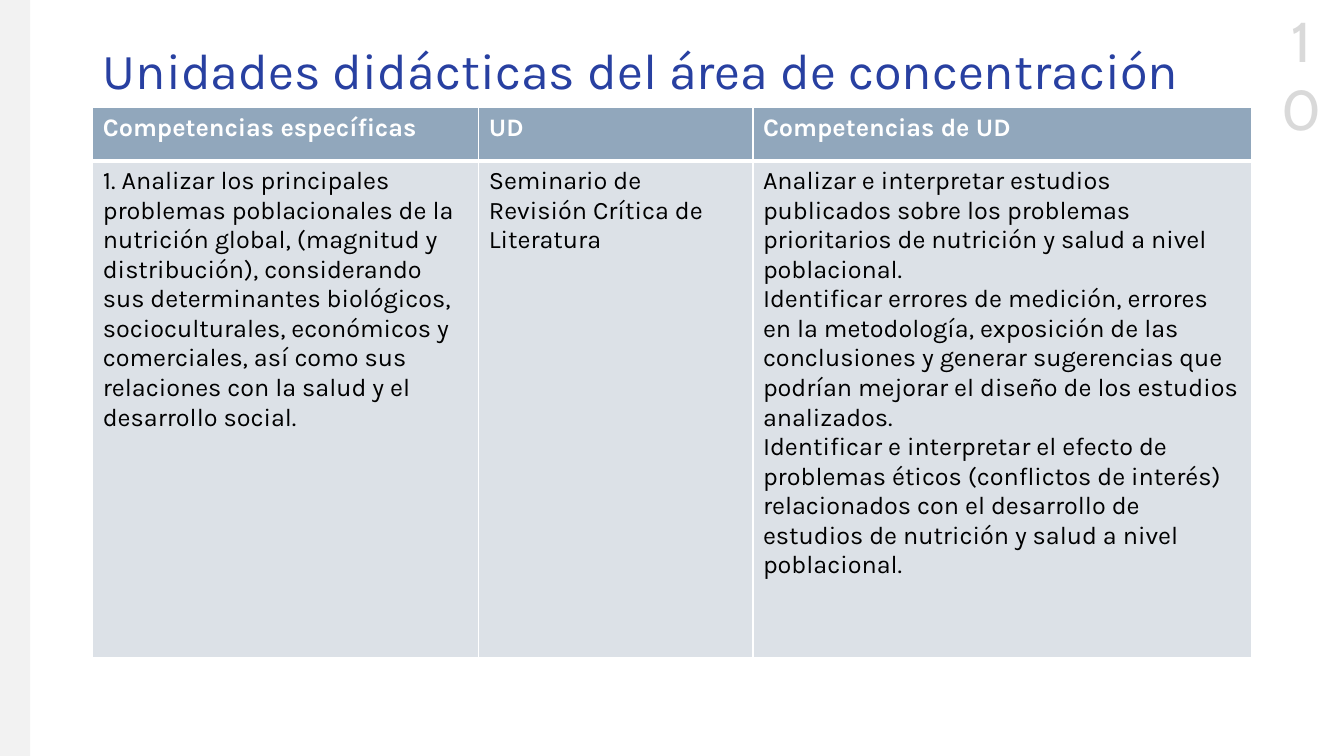
"""Build the slide on the teaching units of the concentration area."""
import dataclasses
import typing

import pptx
import pptx.dml.color
import pptx.enum.shapes
import pptx.enum.text
import pptx.oxml.ns
import pptx.oxml.xmlchemy
import pptx.presentation
import pptx.slide
import pptx.table
import pptx.text.text
import pptx.util
from lxml import etree

Pt = pptx.util.Pt
RGBColor = pptx.dml.color.RGBColor

WHITE = RGBColor(0xFF, 0xFF, 0xFF)
BLACK = RGBColor(0x00, 0x00, 0x00)
BLUE = RGBColor(0x28, 0x40, 0xA1)
BAND_GREY = RGBColor(0xF2, 0xF2, 0xF2)
NUMBER_GREY = RGBColor(0xD9, 0xD9, 0xD9)
HEADER_FILL = RGBColor(0x91, 0xA7, 0xBC)
BODY_FILL = RGBColor(0xDC, 0xE1, 0xE7)

LEFT = 66.24
WIDTH = 828


@dataclasses.dataclass(frozen=True)
class Column:
    width: float
    heading: str
    body: str


@dataclasses.dataclass(frozen=True)
class RowStyle:
    height: float
    fill: RGBColor
    color: RGBColor
    bold: bool
    top: float
    bottom: float


COLUMNS = (
    Column(
        275.76,
        "Competencias específicas",
        "1. Analizar los principales problemas poblacionales de la nutrición global, "
        "(magnitud y distribución), considerando sus determinantes biológicos, "
        "socioculturales, económicos y comerciales, así como sus relaciones con la "
        "salud y el desarrollo social.",
    ),
    Column(195.84, "UD", "Seminario de Revisión Crítica de Literatura"),
    Column(
        356.4,
        "Competencias de UD",
        "Analizar e interpretar estudios publicados sobre los problemas prioritarios "
        "de nutrición y salud a nivel poblacional.\n"
        "Identificar errores de medición, errores en la metodología, exposición de las "
        "conclusiones y generar sugerencias que podrían mejorar el diseño de los "
        "estudios analizados.\n"
        "Identificar e interpretar el efecto de problemas éticos (conflictos de "
        "interés) relacionados con el desarrollo de estudios de nutrición y salud a "
        "nivel poblacional.",
    ),
)
ROWS = (
    RowStyle(38.16, HEADER_FILL, WHITE, True, 1, 3),
    RowStyle(354.24, BODY_FILL, BLACK, False, 3, 1),
)


def format_text(tf: pptx.text.text.TextFrame, font: str, size: float,
                color: RGBColor, bold: bool = False) -> None:
    for p in tf.paragraphs:
        for r in p.runs:
            r.font.name = font
            r.font.size = Pt(size)
            r.font.bold = bold
            r.font.color.rgb = color


def set_borders(cell: typing.Any, style: RowStyle) -> None:
    tc_pr = cell._tc.get_or_add_tcPr()
    qn = pptx.oxml.ns.qn
    edges = (("lnL", 1), ("lnR", 1), ("lnT", style.top), ("lnB", style.bottom))
    for i, (tag, width) in enumerate(edges):
        ln = etree.Element(qn(f"a:{tag}"), w=str(Pt(width)))
        fill = etree.SubElement(ln, qn("a:solidFill"))
        etree.SubElement(fill, qn("a:srgbClr"), val=str(WHITE))
        tc_pr.insert(i, ln)


def add_side_band(slide: pptx.slide.Slide) -> None:
    sp = slide.shapes.add_shape(
        pptx.enum.shapes.MSO_SHAPE.RECTANGLE, 0, 0, Pt(21.6), Pt(540))
    sp.shadow.inherit = False
    sp.fill.solid()
    sp.fill.fore_color.rgb = BAND_GREY
    sp.line.fill.background()


def add_number(slide: pptx.slide.Slide) -> None:
    sp = slide.shapes.add_textbox(Pt(902.88), Pt(1.44), Pt(54), Pt(55.44))
    tf = sp.text_frame
    tf.word_wrap = True
    tf.text = "10"
    tf.paragraphs[0].alignment = pptx.enum.text.PP_ALIGN.CENTER
    format_text(tf, "Cabin", 40, NUMBER_GREY)


def set_title(slide: pptx.slide.Slide) -> None:
    sp = slide.shapes.title
    sp.left, sp.top, sp.width, sp.height = Pt(LEFT), Pt(28.8), Pt(WIDTH), Pt(47.52)
    tf = sp.text_frame
    tf.text = "Unidades didácticas del área de concentración"
    tf.auto_size = pptx.enum.text.MSO_AUTO_SIZE.NONE
    tf.vertical_anchor = pptx.enum.text.MSO_ANCHOR.MIDDLE
    p = tf.paragraphs[0]
    p.alignment = pptx.enum.text.PP_ALIGN.LEFT
    p.line_spacing = 0.9
    format_text(tf, "Karla", 36, BLUE)


def add_units_table(slide: pptx.slide.Slide) -> None:
    height = sum(style.height for style in ROWS)
    table = slide.shapes.add_table(
        len(ROWS), len(COLUMNS), Pt(LEFT), Pt(77.04), Pt(WIDTH), Pt(height)).table
    for r, style in enumerate(ROWS):
        table.rows[r].height = Pt(style.height)
        for c, column in enumerate(COLUMNS):
            table.columns[c].width = Pt(column.width)
            cell = table.cell(r, c)
            cell.text_frame.text = (column.heading, column.body)[r]
            format_text(cell.text_frame, "Karla", 18, style.color, style.bold)
            cell.fill.solid()
            cell.fill.fore_color.rgb = style.fill
            set_borders(cell, style)


def main() -> None:
    prs = pptx.Presentation()
    prs.slide_width, prs.slide_height = Pt(960), Pt(540)
    slide = prs.slides.add_slide(prs.slide_layouts[5])
    add_number(slide)
    add_side_band(slide)
    set_title(slide)
    add_units_table(slide)
    prs.save("out.pptx")


if __name__ == "__main__":
    main()
